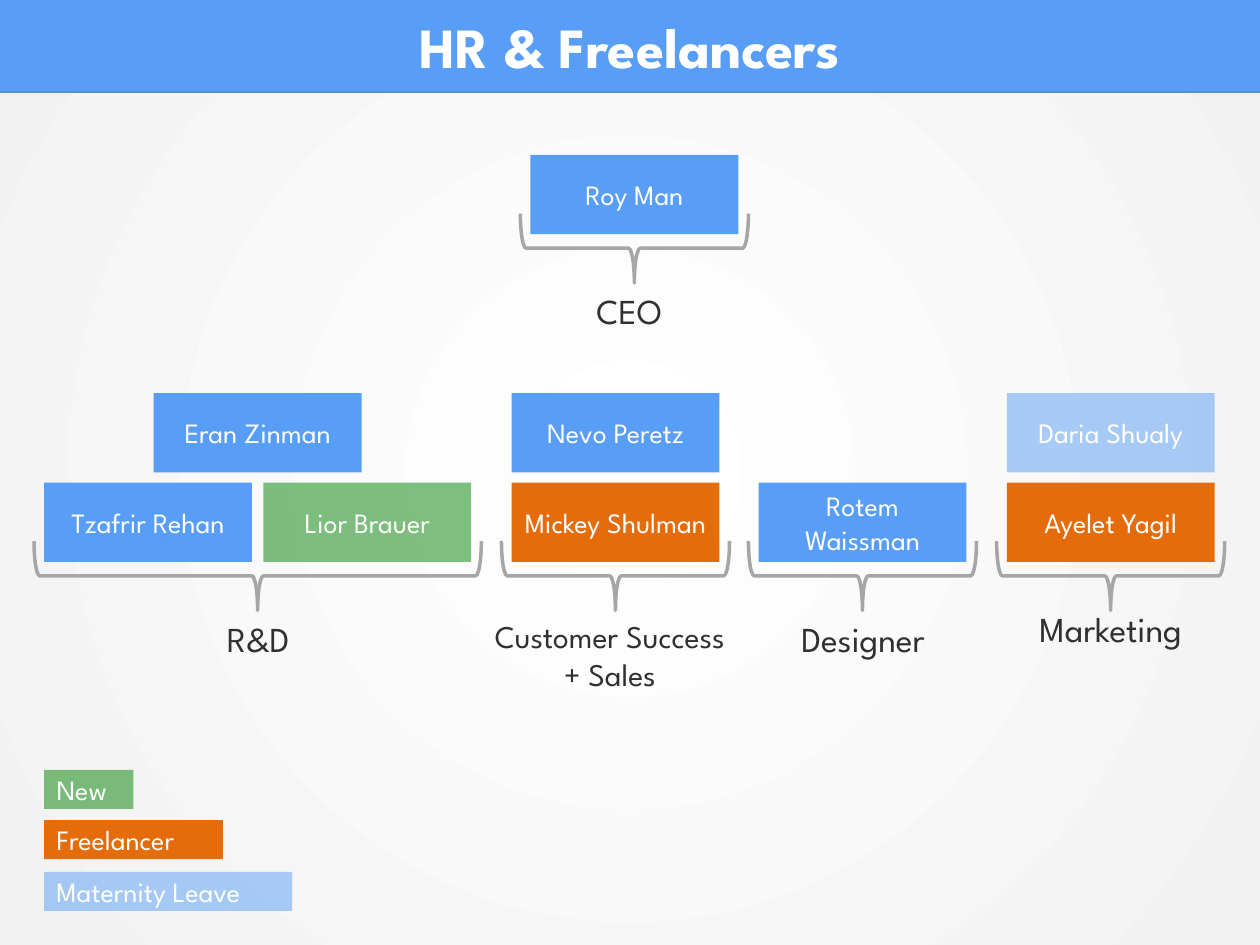
from dataclasses import dataclass

from lxml import etree
from pptx import Presentation
from pptx.dml.color import RGBColor
from pptx.enum.shapes import MSO_CONNECTOR, MSO_SHAPE
from pptx.enum.text import MSO_ANCHOR, PP_ALIGN
from pptx.oxml.ns import qn
from pptx.util import Inches, Pt

RECT, BRACE, LINE = MSO_SHAPE.RECTANGLE, MSO_SHAPE.LEFT_BRACE, MSO_CONNECTOR.STRAIGHT
LEFT, CENTER = PP_ALIGN.LEFT, PP_ALIGN.CENTER
TOP, MIDDLE = MSO_ANCHOR.TOP, MSO_ANCHOR.MIDDLE


@dataclass(frozen=True)
class Theme:
    font: str = "League Spartan"
    blue: str = "589DF6"
    rule: str = "528FD3"
    green: str = "008000"
    orange: str = "E46C0A"
    brace: str = "A6A6A6"
    ink: str = "303030"
    white: str = "FFFFFF"
    edge: str = "F2F2F2"
    title: float = 32.4
    role: float = 20
    long_role: float = 18
    name: float = 16


T = Theme()

# Card styles: colour and opacity in percent
STAFF, NEW = (T.blue, 100), (T.green, 50)
FREELANCER, LEAVE = (T.orange, 100), (T.blue, 50)

# Card grid
CARD_W, CARD_H, GAP = 1.65, 0.63, 0.09
UPPER, LOWER = 3.12, 3.83
BRACE_DEPTH, BRACE_DROP, BRACE_MARGIN = 0.55, 0.11, 0.08


def rgb(value):
    return RGBColor.from_string(value)


class Deck:
    def __init__(self, prs, theme):
        self.t = theme
        self.s = prs.slides.add_slide(prs.slide_layouts[6])

    def background(self):
        fill = self.s.background.fill
        fill.gradient()
        for stop, color in zip(fill.gradient_stops, (self.t.white, self.t.edge)):
            stop.color.rgb = rgb(color)
        grad = self.s.element.find(".//" + qn("a:gradFill"))
        grad.remove(grad.find(qn("a:lin")))
        radial = etree.SubElement(grad, qn("a:path"), {"path": "circle"})
        etree.SubElement(radial, qn("a:fillToRect"),
                         {side: "50000" for side in "ltrb"})

    def set_text(self, sp, text, size, color, align=CENTER, anchor=MIDDLE,
                 bold=False, before=0):
        tf = sp.text_frame
        tf.word_wrap, tf.vertical_anchor = True, anchor
        p = tf.paragraphs[0]
        p.alignment, p.space_before = align, Pt(before)
        r = p.add_run()
        r.text = text
        style = {"name": self.t.font, "size": Pt(size), "bold": bold}
        for key, value in style.items():
            setattr(r.font, key, value)
        r.font.color.rgb = rgb(color)

    def box(self, x, y, w, h, style):
        color, opacity = style
        sp = self.s.shapes.add_shape(RECT, *map(Inches, (x, y, w, h)))
        sp.shadow.inherit = False
        sp.fill.solid()
        sp.fill.fore_color.rgb = rgb(color)
        sp.line.fill.background()
        if opacity < 100:
            clr = sp.element.spPr.find(".//" + qn("a:srgbClr"))
            etree.SubElement(clr, qn("a:alpha"), val=str(opacity * 1000))
        return sp

    def card(self, x, y, text, style, w=CARD_W, h=CARD_H, align=CENTER):
        sp = self.box(x, y, w, h, style)
        self.set_text(sp, text, self.t.name, self.t.white, align)

    def label(self, x, y, w, h, text, size, **style):
        sp = self.s.shapes.add_textbox(*map(Inches, (x, y, w, h)))
        self.set_text(sp, text, size, **style)

    def role(self, x, y, w, h, text, size):
        self.label(x, y, w, h, text, size, color=self.t.ink, anchor=TOP,
                   before=size * 0.2)

    def brace(self, x, width, card_top):
        """Downward brace under cards that start at x and span width."""
        span = width + 2 * BRACE_MARGIN
        cx, cy = x + width / 2, card_top + CARD_H + BRACE_DROP
        sp = self.s.shapes.add_shape(
            BRACE, Inches(cx - BRACE_DEPTH / 2), Inches(cy - span / 2),
            Inches(BRACE_DEPTH), Inches(span))
        sp.rotation = 270
        sp.shadow.inherit = False
        sp.fill.background()
        sp.line.color.rgb = rgb(self.t.brace)
        sp.line.width = Pt(2)

    def rule(self, y, width):
        ln = self.s.shapes.add_connector(LINE, 0, Inches(y), Inches(width), Inches(y))
        ln.line.color.rgb = rgb(self.t.rule)
        ln.line.width = Pt(0.75)
        etree.SubElement(ln.element.spPr, qn("a:effectLst"))


# Teams: left edge, columns, cards (column, top, name, style), role box, role, size
TEAMS = [
    (4.21, 1, [(0, 1.23, "Roy Man", STAFF)],
     (4.21, 2.25, 1.57, 0.63), "CEO", T.role),
    (0.35, 2, [(0.5, UPPER, "Eran Zinman", STAFF),
               (0, LOWER, "Tzafrir Rehan", STAFF),
               (1, LOWER, "Lior Brauer", NEW)],
     (1.38, 4.85, 1.34, 0.47), "R&D", T.role),
    (4.06, 1, [(0, UPPER, "Nevo Peretz", STAFF),
               (0, LOWER, "Mickey Shulman", FREELANCER)],
     (3.74, 4.85, 2.2, 0.63), "Customer Success + Sales", T.long_role),
    (6.02, 1, [(0, LOWER, "Rotem Waissman", STAFF)],
     (6.1, 4.85, 1.5, 0.94), "Designer", T.role),
    (7.99, 1, [(0, UPPER, "Daria Shualy", LEAVE),
               (0, LOWER, "Ayelet Yagil", FREELANCER)],
     (7.99, 4.77, 1.65, 0.63), "Marketing", T.role),
]

LEGEND = [
    (6.11, 0.71, "New", NEW),
    (6.51, 1.42, "Freelancer", FREELANCER),
    (6.92, 1.97, "Maternity Leave", LEAVE),
]


def main():
    prs = Presentation()
    prs.slide_width, prs.slide_height = Inches(10), Inches(7.5)
    deck = Deck(prs, T)
    deck.background()

    # Title band
    deck.box(0, 0, 10, 0.73, STAFF)
    deck.rule(0.73, 10)
    deck.label(0.5, 0.05, 9, 0.63, "HR & Freelancers", T.title,
               color=T.white, bold=True)

    # Teams
    for x, columns, cards, role_box, role, size in TEAMS:
        for column, top, name, style in cards:
            deck.card(x + column * (CARD_W + GAP), top, name, style)
        width = columns * CARD_W + (columns - 1) * GAP
        deck.brace(x, width, cards[-1][1])
        deck.role(*role_box, role, size)

    # Legend
    for top, width, text, style in LEGEND:
        deck.card(0.35, top, text, style, w=width, h=0.31, align=LEFT)

    prs.save("out.pptx")


if __name__ == "__main__":
    main()
